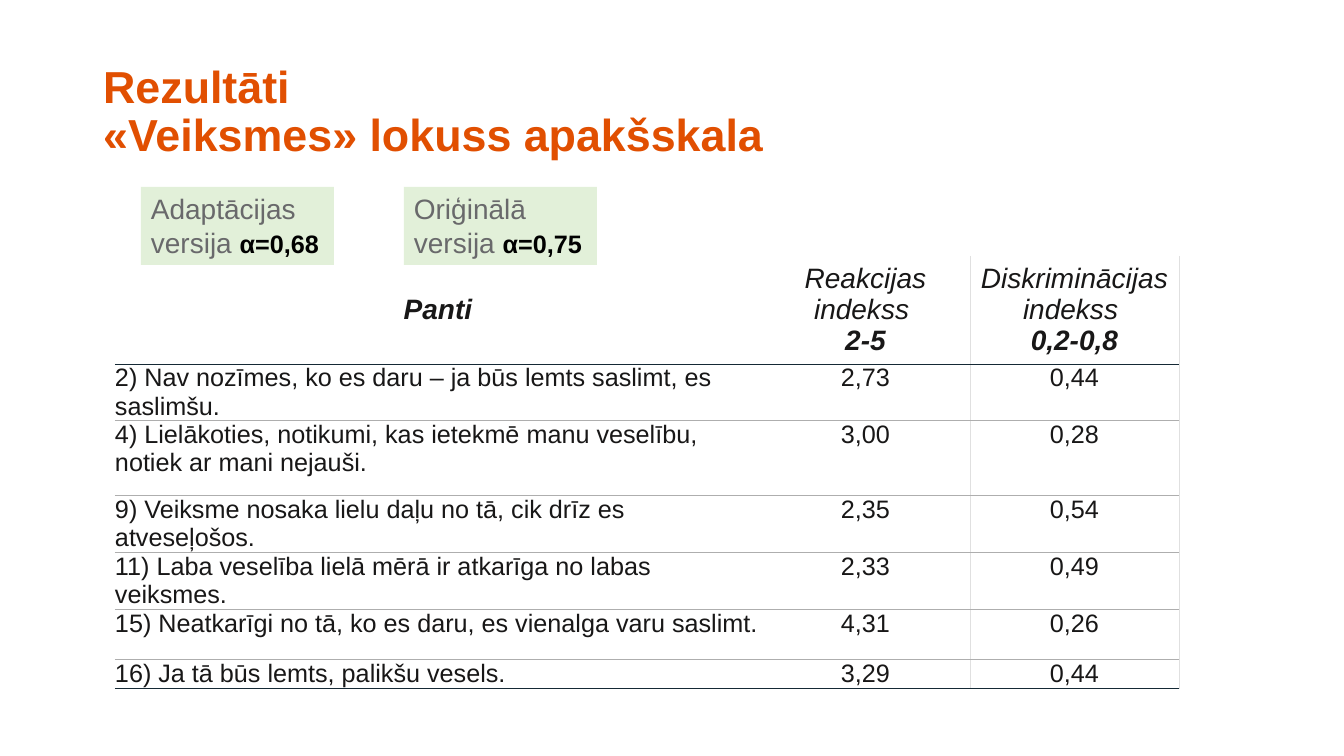
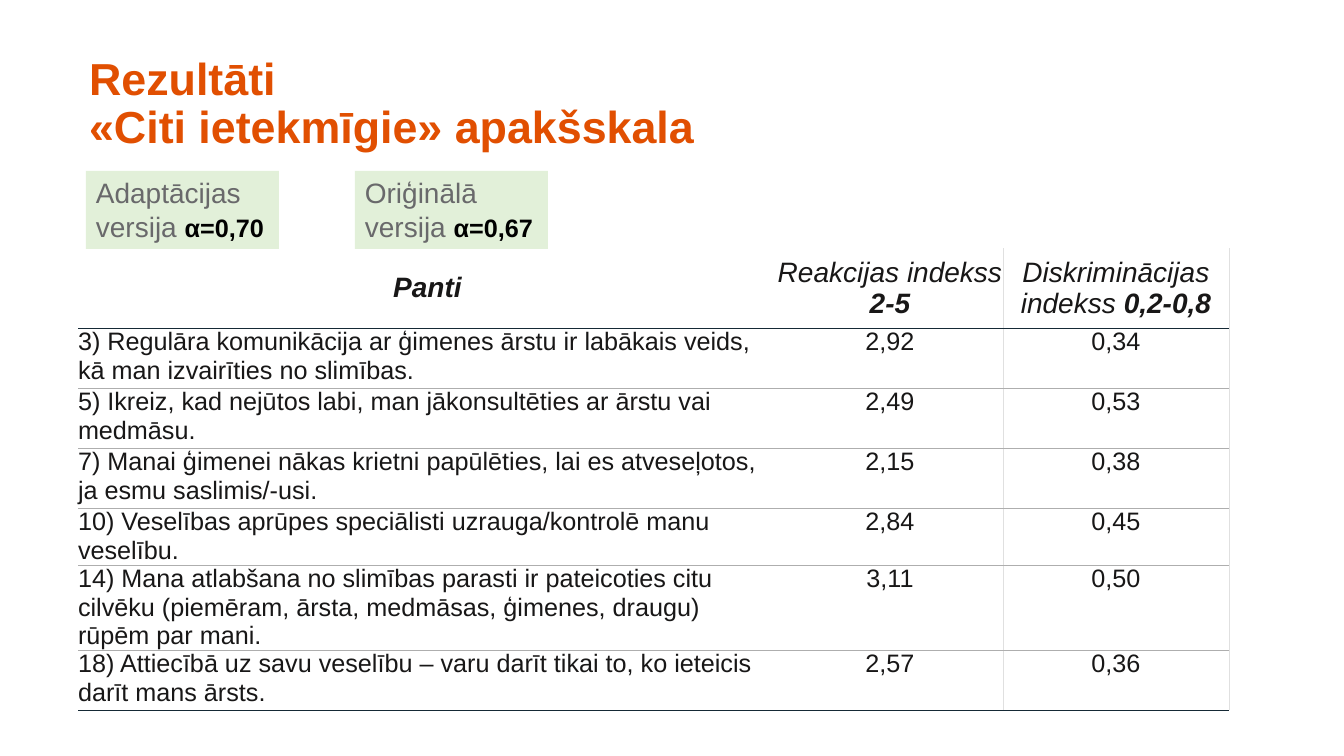
import lxml.etree
import pptx
import pptx.dml.color
import pptx.enum.shapes
import pptx.enum.text
import pptx.oxml.ns
import pptx.util

PX = 9072  # EMU in one px
THEME = {
    "font": "Arial",
    "title": "E14F01", "text": "181717", "label": "69696B", "alpha": "000000",
    "box": "E2F0D9", "rule": "152935", "row_line": "AEAEAE", "col_line": "E0E0E0",
    "title_size": 32, "head_size": 20, "body_size": 18,
}
ALIGN = pptx.enum.text.PP_ALIGN
ANCHOR = pptx.enum.text.MSO_ANCHOR

# Each header cell is a list of paragraphs, each a list of (text, bold) runs
SLIDES = [
    {
        "title": ("Rezultāti", "«Veiksmes» lokuss apakšskala"),
        "title_at": (93, 40),
        "boxes_at": (141, 404), "boxes_top": 187,
        "alphas": ("α=0,68", "α=0,75"),
        "table_at": (115, 256),
        "cols": (646, 209, 209),
        "heights": (108, 56, 75, 57, 57, 50, 29),
        "header": [
            [[("Panti", True)]],
            [[("Reakcijas indekss ", False)], [("2-5", True)]],
            [[("Diskriminācijas indekss ", False)], [("0,2-0,8", True)]],
        ],
        "rows": [
            ("2) Nav nozīmes, ko es daru – ja būs lemts saslimt, es saslimšu.", "2,73", "0,44"),
            ("4) Lielākoties, notikumi, kas ietekmē manu veselību, notiek ar mani nejauši.", "3,00", "0,28"),
            ("9) Veiksme nosaka lielu daļu no tā, cik drīz es atveseļošos.", "2,35", "0,54"),
            ("11) Laba veselība lielā mērā ir atkarīga no labas veiksmes.", "2,33", "0,49"),
            ("15) Neatkarīgi no tā, ko es daru, es vienalga varu saslimt.", "4,31", "0,26"),
            ("16) Ja tā būs lemts, palikšu vesels.", "3,29", "0,44"),
        ],
    },
    {
        "title": ("Rezultāti", "«Citi ietekmīgie» apakšskala"),
        "title_at": (79, 32),
        "boxes_at": (86, 355), "boxes_top": 171,
        "alphas": ("α=0,70", "α=0,67"),
        "table_at": (78, 248),
        "cols": (699, 226, 226),
        "heights": (80, 60, 60, 60, 57, 85, 60),
        "header": [
            [[("Panti", True)]],
            [[("Reakcijas indekss ", False), ("2-5", True)]],
            [[("Diskriminācijas indekss ", False), ("0,2-0,8", True)]],
        ],
        "rows": [
            ("3) Regulāra komunikācija ar ģimenes ārstu ir labākais veids, kā man izvairīties no slimības.", "2,92", "0,34"),
            ("5) Ikreiz, kad nejūtos labi, man jākonsultēties ar ārstu vai medmāsu.", "2,49", "0,53"),
            ("7) Manai ģimenei nākas krietni papūlēties, lai es atveseļotos, ja esmu saslimis/-usi.", "2,15", "0,38"),
            ("10) Veselības aprūpes speciālisti uzrauga/kontrolē manu veselību.", "2,84", "0,45"),
            ("14) Mana atlabšana no slimības parasti ir pateicoties citu cilvēku (piemēram, ārsta, medmāsas, ģimenes, draugu) rūpēm par mani.", "3,11", "0,50"),
            ("18) Attiecībā uz savu veselību – varu darīt tikai to, ko ieteicis darīt mans ārsts.", "2,57", "0,36"),
        ],
    },
]


def add_run(p, text, size, color, bold=False, italic=False):
    r = p.add_run()
    r.text = text
    r.font.name = THEME["font"]
    r.font.size = pptx.util.Pt(THEME[size])
    r.font.color.rgb = pptx.dml.color.RGBColor.from_string(THEME[color])
    r.font.bold = bold
    r.font.italic = italic


def add_border(cell, side, color):
    qn = pptx.oxml.ns.qn
    ln = lxml.etree.SubElement(cell._tc.get_or_add_tcPr(), qn("a:ln" + side), w="6350")
    if color is None:
        lxml.etree.SubElement(ln, qn("a:noFill"))
    else:
        fill = lxml.etree.SubElement(ln, qn("a:solidFill"))
        lxml.etree.SubElement(fill, qn("a:srgbClr"), val=THEME[color])


prs = pptx.Presentation()
prs.slide_width = 1344 * PX
prs.slide_height = 756 * PX

for data in SLIDES:
    s = prs.slides.add_slide(prs.slide_layouts[5])

    # Title
    title = s.shapes.title
    left, top = data["title_at"]
    title.left, title.top = left * PX, top * PX
    title.width, title.height = 1159 * PX, 146 * PX
    tf = title.text_frame
    tf.auto_size = pptx.enum.text.MSO_AUTO_SIZE.NONE
    tf.vertical_anchor = ANCHOR.MIDDLE
    p = tf.paragraphs[0]
    p.alignment = ALIGN.LEFT
    p.line_spacing = 0.9
    add_run(p, data["title"][0], "title_size", "title", bold=True)
    p.add_line_break()
    add_run(p, data["title"][1], "title_size", "title", bold=True)

    # Table of items
    left, top = data["table_at"]
    cols, heights = data["cols"], data["heights"]
    tbl = s.shapes.add_table(len(heights), len(cols), left * PX, top * PX,
                             sum(cols) * PX, sum(heights) * PX).table
    tbl.first_row = False
    tbl.horz_banding = False
    for column, width in zip(tbl.columns, cols):
        column.width = width * PX
    for row, height in zip(tbl.rows, heights):
        row.height = height * PX

    body = [[[[(text, False)]] for text in row] for row in data["rows"]]
    last = len(body)
    for i, row in enumerate([data["header"]] + body):
        is_header = i == 0
        for j, paragraphs in enumerate(row):
            cell = tbl.cell(i, j)
            cell.margin_left = cell.margin_right = 0
            cell.margin_top = cell.margin_bottom = 0
            cell.vertical_anchor = ANCHOR.MIDDLE if is_header else ANCHOR.TOP
            add_border(cell, "L", "col_line" if j == 2 else None)
            add_border(cell, "R", "col_line" if j > 0 else None)
            add_border(cell, "T", (None, "rule")[i] if i < 2 else "row_line")
            add_border(cell, "B", "rule" if i in (0, last) else "row_line")
            cell.fill.background()
            tf = cell.text_frame
            for k, runs in enumerate(paragraphs):
                p = tf.add_paragraph() if k else tf.paragraphs[0]
                p.alignment = ALIGN.CENTER if is_header or j else ALIGN.LEFT
                for text, bold in runs:
                    add_run(p, text, "head_size" if is_header else "body_size",
                            "text", bold, italic=is_header)

    # Reliability boxes
    labels = ("Adaptācijas versija ", "Oriģinālā versija ")
    for left, label, alpha in zip(data["boxes_at"], labels, data["alphas"]):
        sp = s.shapes.add_shape(pptx.enum.shapes.MSO_SHAPE.RECTANGLE, left * PX,
                                data["boxes_top"] * PX, 193 * PX, 78 * PX)
        sp.shadow.inherit = False
        sp.fill.solid()
        sp.fill.fore_color.rgb = pptx.dml.color.RGBColor.from_string(THEME["box"])
        sp.line.fill.background()
        tf = sp.text_frame
        tf.word_wrap = True
        tf.auto_size = pptx.enum.text.MSO_AUTO_SIZE.SHAPE_TO_FIT_TEXT
        tf.vertical_anchor = ANCHOR.TOP
        p = tf.paragraphs[0]
        p.alignment = ALIGN.LEFT
        add_run(p, label, "head_size", "label")
        add_run(p, alpha, "body_size", "alpha", bold=True)

prs.save("out.pptx")
